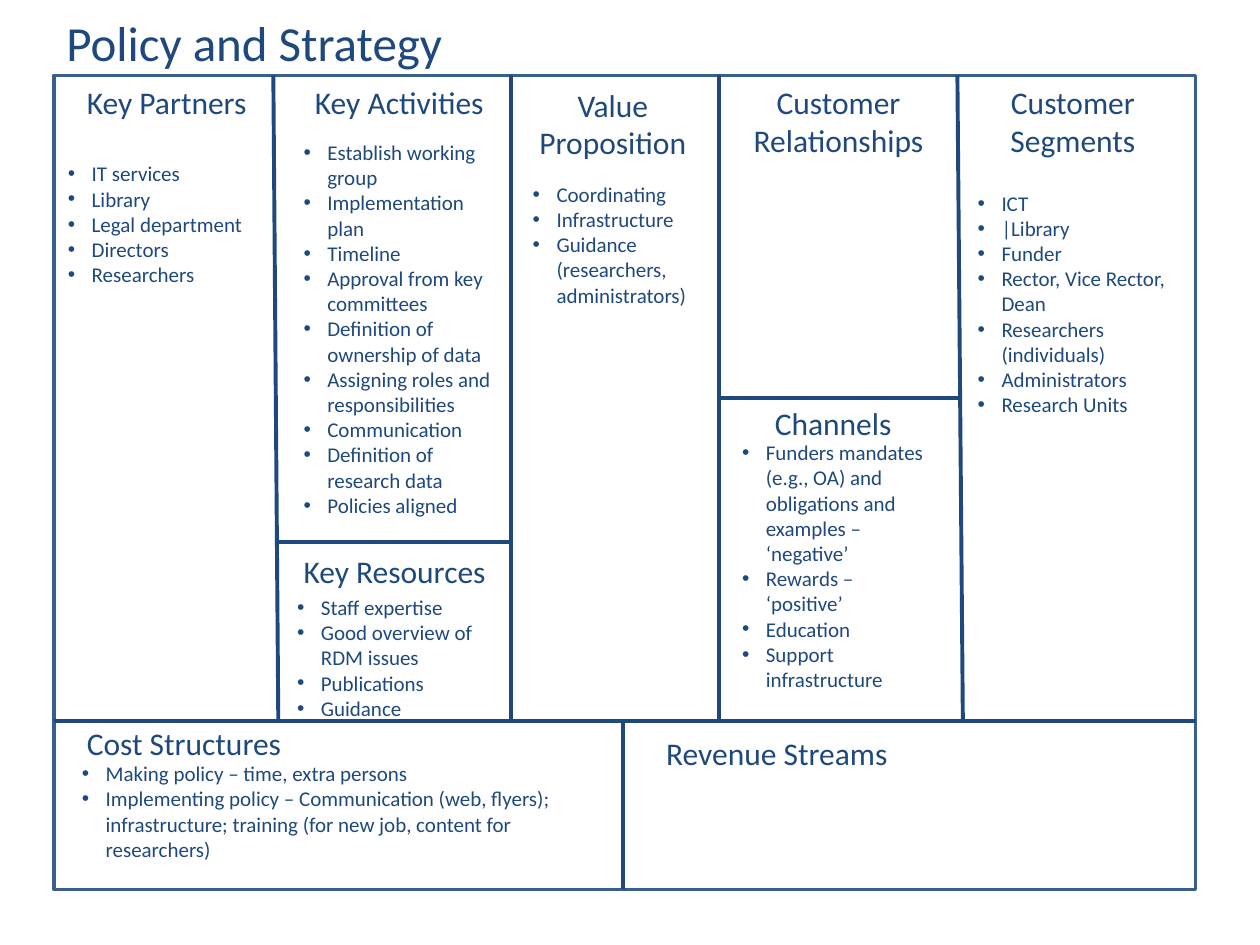
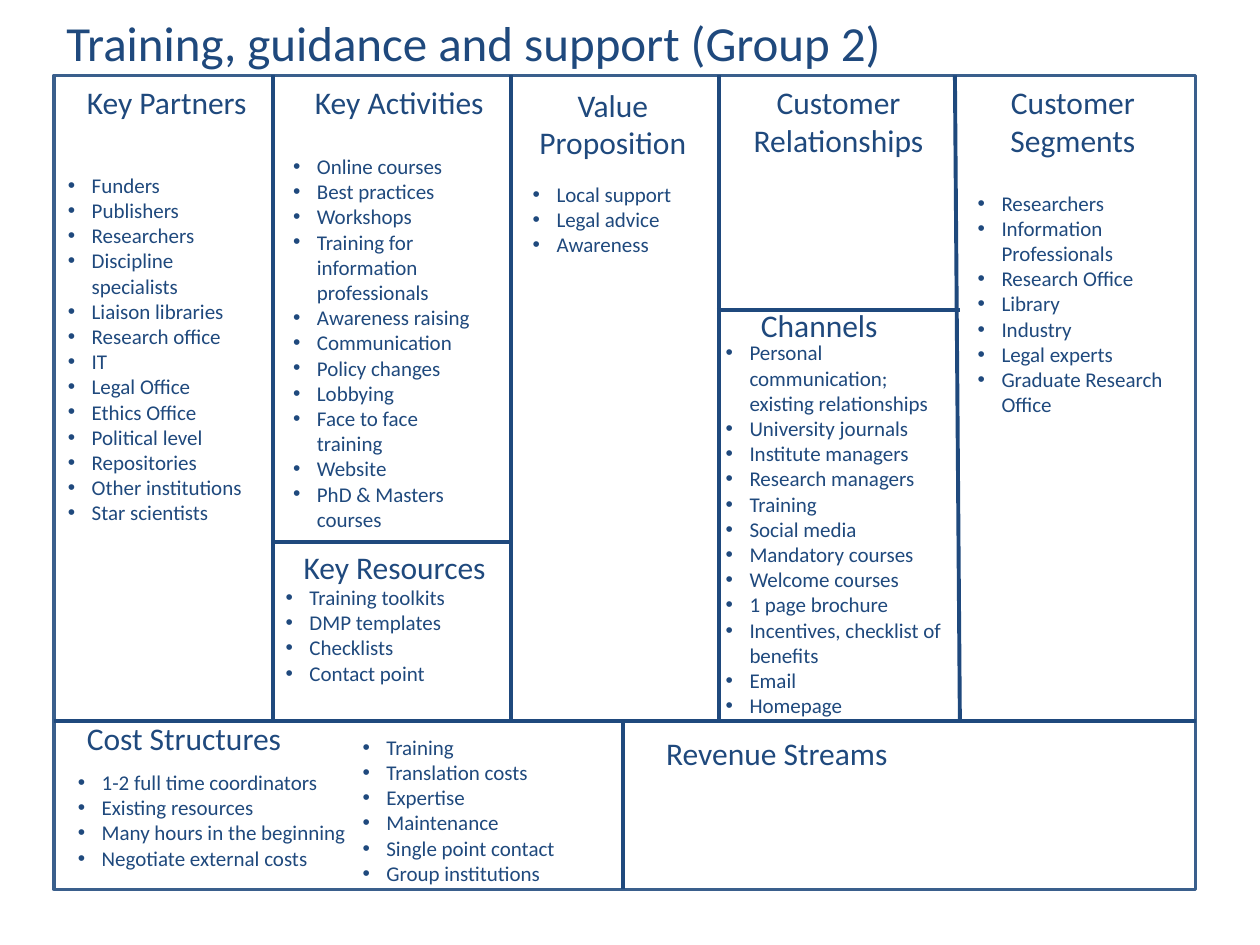
from dataclasses import dataclass

from lxml.etree import SubElement
from pptx import Presentation
from pptx.dml.color import RGBColor
from pptx.enum.shapes import MSO_CONNECTOR as Link, MSO_SHAPE as Form
from pptx.enum.text import MSO_AUTO_SIZE as Fit, PP_ALIGN as Align
from pptx.oxml.ns import qn
from pptx.slide import Slide
from pptx.text.text import TextFrame
from pptx.util import Cm, Pt

NAVY = RGBColor(0x1F, 0x49, 0x7D)
STEEL = RGBColor(0x3A, 0x5F, 0x8C)
FONT = "Calibri"
LEFT, TOP, RIGHT, BASE = 1.09, 1.52, 24.1, 17.93
FLOOR = 14.53
INDENT = 0.48


@dataclass(frozen=True)
class Rule:
    x1: float
    y1: float
    x2: float
    y2: float


@dataclass(frozen=True)
class Label:
    text: str
    x: float
    y: float
    wide: float
    high: float = 1.02
    size: int = 18
    wrap: bool = False


@dataclass(frozen=True)
class Points:
    x: float
    y: float
    wide: float
    high: float
    items: tuple[str, ...]


@dataclass(frozen=True)
class Canvas:
    title: Label
    rules: tuple[Rule, ...]
    heads: tuple[Label, ...]
    lists: tuple[Points, ...]


RULES = (
    Rule(10.31, TOP, 10.31, FLOOR),
    Rule(14.5, TOP, 14.5, FLOOR),
    Rule(LEFT, FLOOR, RIGHT, FLOOR),
    Rule(12.55, FLOOR, 12.55, BASE),
)

HEADS = (
    Label("Key Partners", 1.5, 1.55, 3.76),
    Label("Key Activities", 6.1, 1.55, 3.96),
    Label("Value Proposition", 10.41, 1.6, 3.89, 1.8, wrap=True),
    Label("Customer Relationships", 14.71, 1.55, 4.39, 1.8, wrap=True),
    Label("Customer Segments", 19.46, 1.55, 4.34, 1.8, wrap=True),
    Label("Revenue Streams", 13.18, 14.68, 5.03),
)


def title(text: str, wide: float) -> Label:
    return Label(text, LEFT, 0.13, wide, 1.45, 28)


POLICY = Canvas(
    title("Policy and Strategy", 8.15),
    (
        Rule(5.51, TOP, 5.61, FLOOR),
        Rule(19.3, TOP, 19.41, FLOOR),
        Rule(5.61, 10.92, 10.34, 10.92),
        Rule(14.45, 8.03, 19.35, 8.03),
    ),
    (
        Label("Key Resources", 5.87, 11, 4.22),
        Label("Channels", 15.37, 8.03, 2.9),
        Label("Cost Structures", 1.5, 14.48, 4.47),
    ),
    (
        Points(1.12, 3.12, 4.39, 6.93, (
            "IT services", "Library", "Legal department", "Directors",
            "Researchers")),
        Points(5.87, 2.69, 4.39, 8.97, (
            "Establish working group", "Implementation plan", "Timeline",
            "Approval from key committees",
            "Definition of ownership of data",
            "Assigning roles and responsibilities", "Communication",
            "Definition of research data", "Policies aligned")),
        Points(5.74, 11.86, 4.39, 3.33, (
            "Staff expertise", "Good overview of RDM issues",
            "Publications", "Guidance")),
        Points(19.46, 3.71, 4.39, 4.88, (
            "ICT", "|Library", "Funder", "Rector, Vice Rector, Dean",
            "Researchers (individuals)", "Administrators",
            "Research Units")),
        Points(14.71, 8.74, 4.39, 5.38, (
            "Funders mandates (e.g., OA) and obligations and examples – "
            "‘negative’",
            "Rewards – ‘positive’", "Education", "Support infrastructure")),
        Points(10.49, 3.53, 3.99, 3.33, (
            "Coordinating", "Infrastructure",
            "Guidance (researchers, administrators)")),
        Points(1.4, 15.21, 11, 2.31, (
            "Making policy – time, extra persons",
            "Implementing policy – Communication (web, flyers); "
            "infrastructure; training (for new job, content for "
            "researchers)")),
    ),
)

TRAINING = Canvas(
    title("Training, guidance and support (Group 2)", 17.12),
    (
        Rule(5.51, TOP, 5.51, FLOOR),
        Rule(19.25, TOP, 19.35, FLOOR),
        Rule(5.51, 10.92, 10.34, 10.92),
        Rule(14.45, 6.25, 19.35, 6.25),
    ),
    (
        Label("Key Resources", 5.87, 10.92, 4.22),
        Label("Channels", 15.09, 6.05, 2.9),
        Label("Cost Structures", 1.5, 14.38, 4.47),
    ),
    (
        Points(1.12, 3.35, 4.39, 8.46, (
            "Funders", "Publishers", "Researchers",
            "Discipline specialists", "Liaison libraries",
            "Research office", "IT", "Legal Office", "Ethics Office",
            "Political level", "Repositories", "Other institutions",
            "Star scientists")),
        Points(5.66, 2.97, 4.39, 9.5, (
            "Online courses", "Best practices", "Workshops",
            "Training for information professionals", "Awareness raising",
            "Communication", "Policy changes", "Lobbying",
            "Face to face training", "Website", "PhD & Masters courses")),
        Points(5.51, 11.66, 5.05, 2.31, (
            "Training toolkits", "DMP templates", "Checklists",
            "Contact point")),
        Points(19.46, 3.71, 4.39, 5.38, (
            "Researchers", "Information Professionals", "Research Office",
            "Library", "Industry", "Legal experts",
            "Graduate Research Office")),
        Points(10.49, 3.53, 3.99, 2.31, (
            "Local support", "Legal advice", "Awareness")),
        Points(1.32, 15.39, 6.25, 2.31, (
            "1-2 full time coordinators", "Existing resources",
            "Many hours in the beginning", "Negotiate external costs")),
        Points(7.06, 14.68, 5.36, 3.33, (
            "Training", "Translation costs", "Expertise", "Maintenance",
            "Single point contact", "Group institutions")),
        Points(14.38, 6.73, 5.05, 7.95, (
            "Personal communication; existing relationships",
            "University journals", "Institute managers",
            "Research managers", "Training", "Social media",
            "Mandatory courses", "Welcome courses", "1 page brochure",
            "Incentives, checklist of benefits", "Email", "Homepage")),
    ),
)


def add_frame(slide: Slide) -> None:
    frame = slide.shapes.add_shape(
        Form.RECTANGLE, Cm(LEFT), Cm(TOP), Cm(RIGHT - LEFT), Cm(BASE - TOP))
    frame.shadow.inherit = False
    frame.fill.background()
    frame.line.color.rgb = STEEL
    frame.line.width = Pt(2)


def add_rule(slide: Slide, rule: Rule) -> None:
    line = slide.shapes.add_connector(
        Link.STRAIGHT, Cm(rule.x1), Cm(rule.y1), Cm(rule.x2), Cm(rule.y2))
    line.line.color.rgb = NAVY
    line.line.width = Pt(2.25)
    SubElement(line._element.spPr, qn("a:effectLst"))


def add_text(slide: Slide, box: Label | Points, text: str, size: int,
             wrap: bool) -> TextFrame:
    frame = slide.shapes.add_textbox(
        Cm(box.x), Cm(box.y), Cm(box.wide), Cm(box.high)).text_frame
    frame.word_wrap = wrap
    frame.auto_size = Fit.SHAPE_TO_FIT_TEXT
    frame.text = text
    for para in frame.paragraphs:
        for run in para.runs:
            run.font.name = FONT
            run.font.size = Pt(size)
            run.font.color.rgb = NAVY
    return frame


def add_label(slide: Slide, label: Label) -> None:
    frame = add_text(slide, label, label.text, label.size, label.wrap)
    if label.wrap:
        frame.paragraphs[0].alignment = Align.CENTER


def add_points(slide: Slide, points: Points) -> None:
    frame = add_text(slide, points, "\n".join(points.items), 12, True)
    for para in frame.paragraphs:
        props = para._p.get_or_add_pPr()
        props.set("marL", str(Cm(INDENT)))
        props.set("indent", str(-Cm(INDENT)))
        SubElement(props, qn("a:buFont"), typeface="Arial")
        SubElement(props, qn("a:buChar"), char="•")


def draw(slide: Slide, canvas: Canvas) -> None:
    add_frame(slide)
    for rule in canvas.rules + RULES:
        add_rule(slide, rule)
    for label in HEADS + canvas.heads + (canvas.title,):
        add_label(slide, label)
    for points in canvas.lists:
        add_points(slide, points)


def main() -> None:
    deck = Presentation()
    deck.slide_width = Cm(25.4)
    deck.slide_height = Cm(19.05)
    for canvas in (POLICY, TRAINING):
        draw(deck.slides.add_slide(deck.slide_layouts[6]), canvas)
    deck.save("out.pptx")


if __name__ == "__main__":
    main()
